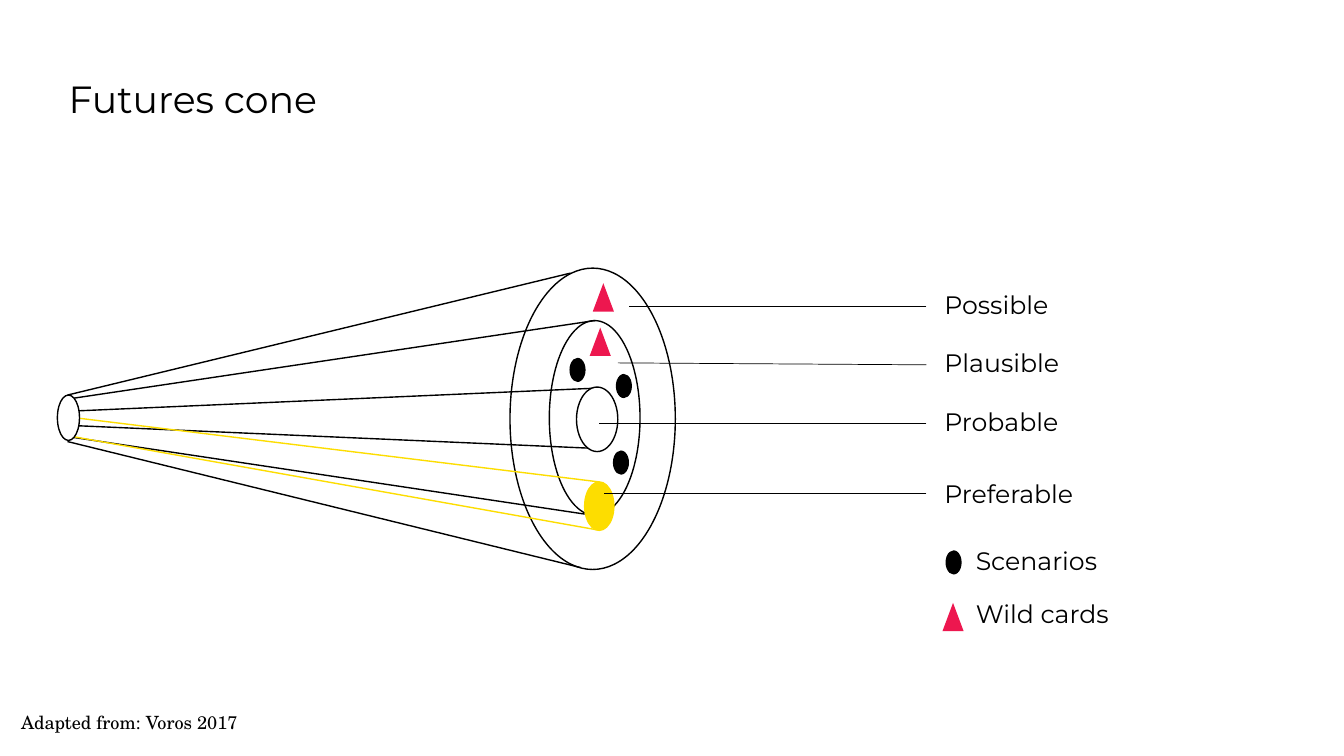
from dataclasses import dataclass

from lxml import etree
from pptx import Presentation
from pptx.dml.color import RGBColor
from pptx.enum.shapes import MSO_CONNECTOR, MSO_SHAPE
from pptx.enum.text import MSO_ANCHOR, MSO_AUTO_SIZE
from pptx.oxml.ns import qn
from pptx.util import Pt

OVAL = MSO_SHAPE.OVAL
TRIANGLE = MSO_SHAPE.ISOSCELES_TRIANGLE
STRAIGHT = MSO_CONNECTOR.STRAIGHT
TOP = MSO_ANCHOR.TOP
MIDDLE = MSO_ANCHOR.MIDDLE
NO_AUTOFIT = MSO_AUTO_SIZE.NONE


@dataclass(frozen=True)
class Theme:
    ink: RGBColor = RGBColor(0x00, 0x00, 0x00)
    paper: RGBColor = RGBColor(0xFF, 0xFF, 0xFF)
    preferable: RGBColor = RGBColor(0xFD, 0xDD, 0x00)
    wild_card: RGBColor = RGBColor(0xED, 0x17, 0x4F)
    font: str = "Montserrat"
    source_font: str = "TeX Gyre Schola"
    title_size: float = 27
    label_size: float = 18
    source_size: float = 13
    outline: float = 1
    leader: float = 0.5


class Canvas:
    def __init__(self, slide, theme):
        self.s = slide
        self.theme = theme

    def text(self, text, x, y, w, h, size, font=None, anchor=TOP):
        sp = self.s.shapes.add_textbox(Pt(x), Pt(y), Pt(w), Pt(h))
        tf = sp.text_frame
        tf.margin_left = tf.margin_right = tf.margin_top = tf.margin_bottom = 0
        tf.word_wrap = True
        tf.auto_size = NO_AUTOFIT
        tf.vertical_anchor = anchor
        r = tf.paragraphs[0].add_run()
        r.text = text
        r.font.size = Pt(size)
        r.font.name = font or self.theme.font
        r.font.color.rgb = self.theme.ink

    def shape(self, kind, x, y, w, h, fill=None, line=None):
        sp = self.s.shapes.add_shape(kind, Pt(x), Pt(y), Pt(w), Pt(h))
        sp.shadow.inherit = False
        if fill is None:
            sp.fill.background()
        else:
            sp.fill.solid()
            sp.fill.fore_color.rgb = fill
        if line is None:
            sp.line.fill.background()
        else:
            sp.line.color.rgb = line
            sp.line.width = Pt(self.theme.outline)

    def line(self, x1, y1, x2, y2, color, width):
        cxn = self.s.shapes.add_connector(STRAIGHT, Pt(x1), Pt(y1), Pt(x2), Pt(y2))
        cxn.line.color.rgb = color
        cxn.line.width = Pt(width)
        etree.SubElement(cxn._element.spPr, qn("a:effectLst"))

    def scenario(self, x, y):
        self.shape(OVAL, x, y, 11.5, 17.3, self.theme.ink)

    def wild_card(self, x, y):
        self.shape(TRIANGLE, x, y, 15.1, 20.2, self.theme.wild_card)

    def label(self, text, x, y):
        self.text(text, x, y, 150, 26, self.theme.label_size)


def draw_cone(c):
    t = c.theme
    apex_x = 48.2
    edges = [
        (293.8, 427, 277.2), (285.1, 424.8, 229), (282.2, 407.5, 195.1),
        (303.8, 427, 320.4), (311.8, 417.6, 367.2), (315.4, 414.7, 405.4),
    ]
    for apex_y, x, y in edges:
        c.line(apex_x, apex_y, x, y, t.ink, t.outline)

    c.shape(OVAL, 411.8, 276.5, 29.5, 46.1, t.paper, t.ink)
    c.shape(OVAL, 392.4, 229, 64.8, 139, None, t.ink)
    c.shape(OVAL, 364.3, 191.5, 118.1, 215.3, None, t.ink)
    c.shape(OVAL, 417.6, 344.2, 20.9, 34.6, t.preferable, t.preferable)
    for x1, y1, y2 in [(43.2, 310.3, 378.7), (56.9, 298.8, 344.2)]:
        c.line(x1, y1, 427.7, y2, t.preferable, t.outline)
    c.shape(OVAL, 41, 282.2, 15.8, 32.4, t.paper, t.ink)

    for x, y in [(437.8, 321.8), (406.8, 255.6), (439.9, 267.1)]:
        c.scenario(x, y)
    for x, y in [(423.4, 202.3), (421.2, 234)]:
        c.wild_card(x, y)


def draw_labels(c):
    t = c.theme
    labels = [
        ("Possible", 206.6, 449.3, 218.9),
        ("Plausible", 248.4, 441.4, 259.2),
        ("Probable", 290.2, 427.7, 302.4),
        ("Preferable", 341.3, 431.3, 352.1),
    ]
    leader_ys = [218.9, 260.6, 302.4, 352.1]
    for (text, y, tip_x, tip_y), leader_y in zip(labels, leader_ys):
        c.label(text, 674.6, y)
        c.line(661.7, leader_y, tip_x, tip_y, t.ink, t.leader)


def draw_legend(c):
    c.scenario(675.4, 393.1)
    c.label("Scenarios", 697, 389.5)
    c.wild_card(673.2, 430.6)
    c.label("Wild cards", 697, 427.7)


def main():
    prs = Presentation()
    prs.slide_width, prs.slide_height = Pt(960), Pt(540)
    s = prs.slides.add_slide(prs.slide_layouts[6])
    t = Theme()
    s.background.fill.solid()
    s.background.fill.fore_color.rgb = t.paper
    c = Canvas(s, t)
    c.text("Futures cone", 49, 51.1, 862, 39, t.title_size, anchor=MIDDLE)
    draw_cone(c)
    draw_labels(c)
    draw_legend(c)
    c.text("Adapted from: Voros 2017", 15.1, 508.3, 201, 15.1, t.source_size, t.source_font)
    prs.save("out.pptx")


if __name__ == "__main__":
    main()
